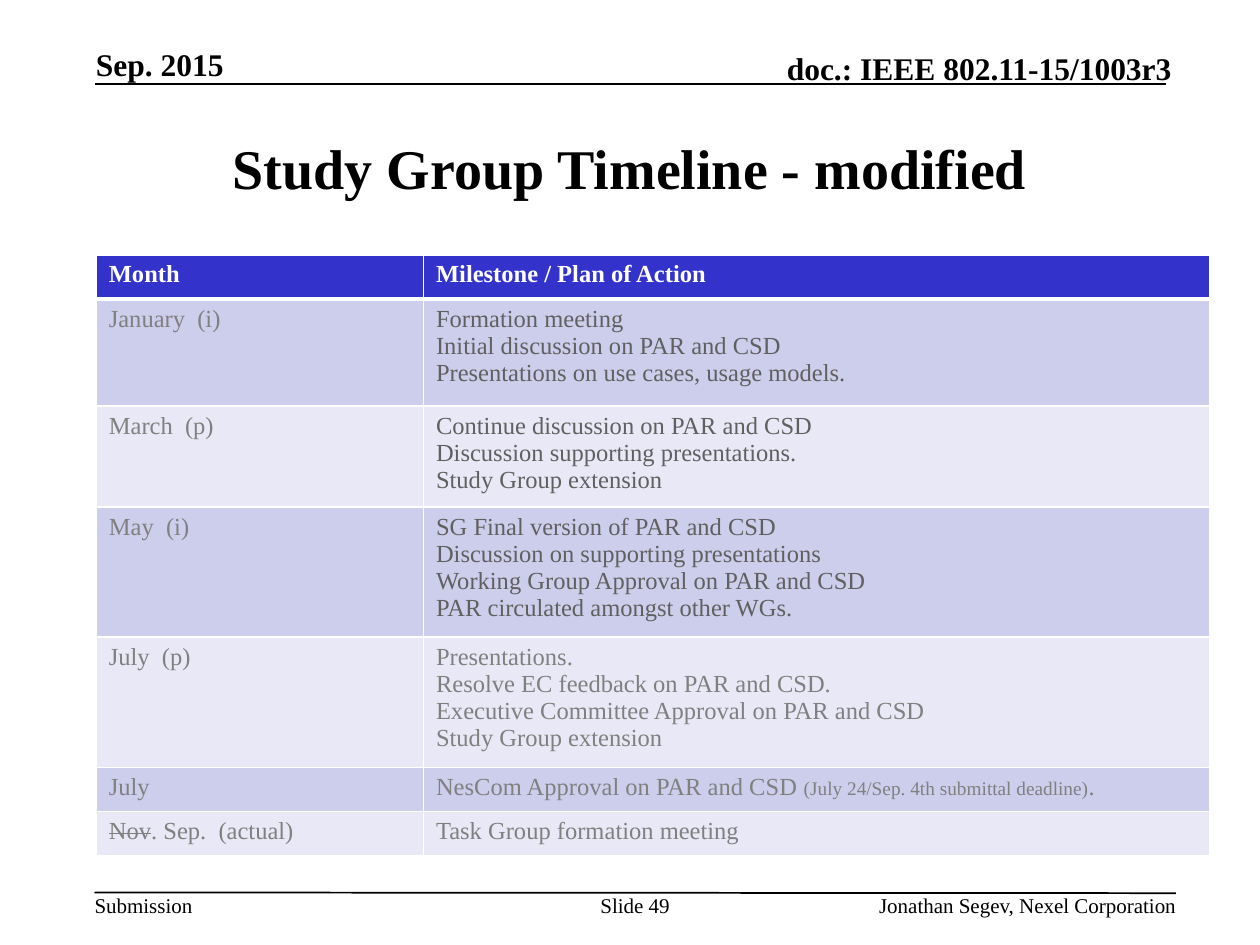
from lxml import etree
from pptx import Presentation
from pptx.dml.color import RGBColor
from pptx.enum import shapes, text
from pptx.oxml import ns
from pptx.util import Pt

COLORS = {
    "black": "000000", "white": "FFFFFF", "header": "3333CC",
    "band_dark": "CDCDEC", "band_light": "E8E8F6",
    "gray": "808080", "dark_gray": "606060",
}
LEFT, CENTER, RIGHT = text.PP_ALIGN.LEFT, text.PP_ALIGN.CENTER, text.PP_ALIGN.RIGHT
TOP, MIDDLE, BOTTOM = text.MSO_ANCHOR.TOP, text.MSO_ANCHOR.MIDDLE, text.MSO_ANCHOR.BOTTOM


def write(paragraph, words, size=14, color="black", bold=False, strike=False, align=LEFT):
    paragraph.alignment = align
    run = paragraph.add_run()
    run.text = words
    run.font.name = "Times New Roman"
    run.font.size = Pt(size)
    run.font.bold = bold
    run.font.color.rgb = RGBColor.from_string(COLORS[color])
    if strike:
        run.font._element.set("strike", "sngStrike")


def set_borders(cell, top, bottom):
    properties = cell._tc.get_or_add_tcPr()
    for position, (side, width) in enumerate(
            [("lnL", 1), ("lnR", 1), ("lnT", top), ("lnB", bottom)]):
        border = etree.Element(ns.qn(f"a:{side}"), w=str(Pt(width)))
        fill = etree.SubElement(border, ns.qn("a:solidFill"))
        etree.SubElement(fill, ns.qn("a:srgbClr"), val=COLORS["white"])
        properties.insert(position, border)


deck = Presentation()
deck.slide_width, deck.slide_height = Pt(720), Pt(540)
slide = deck.slides.add_slide(deck.slide_layouts[5])

# Header and footer rules
for x1, y1, x2, y2 in [(54, 48, 666, 48), (54, 510, 672, 510.4)]:
    rule = slide.shapes.add_connector(
        shapes.MSO_CONNECTOR.STRAIGHT, Pt(x1), Pt(y1), Pt(x2), Pt(y2))
    rule.line.color.rgb = RGBColor.from_string(COLORS["black"])
    rule.line.width = Pt(1)
    etree.SubElement(rule._element.spPr, ns.qn("a:effectLst"))

# Header and footer texts
bold_header = {"size": 18, "bold": True}
for words, x, y, w, h, anchor, style in [
    ("Sep. 2015", 54.8, 26, 147.6, 21.6, BOTTOM, bold_header),
    ("doc.: IEEE 802.11-15/1003r3", 393.8, 28, 275.8, 21.6, BOTTOM,
     {**bold_header, "align": RIGHT}),
    ("Submission", 54, 510, 56, 14.4, TOP, {"size": 12}),
    ("Slide 49", 342, 510, 41.8, 28.8, TOP, {"size": 12, "align": CENTER}),
    ("Jonathan Segev, Nexel Corporation", 421.9, 510, 250.3, 14.4, TOP,
     {"size": 12, "align": RIGHT}),
]:
    frame = slide.shapes.add_textbox(Pt(x), Pt(y), Pt(w), Pt(h)).text_frame
    frame.margin_left = frame.margin_right = frame.margin_top = frame.margin_bottom = 0
    frame.word_wrap = words != "Submission"
    frame.vertical_anchor = anchor
    write(frame.paragraphs[0], words, **style)

# Title
title = slide.shapes.title
title.left, title.top, title.width, title.height = Pt(54), Pt(54), Pt(612), Pt(83.5)
title.text_frame.vertical_anchor = MIDDLE
title.text_frame.auto_size = text.MSO_AUTO_SIZE.NONE
write(title.text_frame.paragraphs[0], "Study Group Timeline - modified",
      size=32, bold=True, align=CENTER)

# Timeline: row height, month runs, milestone color, milestone lines as runs
timeline = [
    (25.2, [("Month", {})], "white", [[("Milestone / Plan of Action", {})]]),
    (61.2, [("January  (i)", {})], "dark_gray", [
        [("Formation meeting", {})],
        [("Initial discussion on PAR and CSD", {})],
        [("Presentations on use cases, usage models.", {})]]),
    (55.4, [("March  (p)", {})], "dark_gray", [
        [("Continue discussion on PAR and CSD", {})],
        [("Discussion supporting presentations.", {})],
        [("Study Group extension", {})]]),
    (72, [("May  (i)", {})], "dark_gray", [
        [("SG Final version of PAR and CSD", {})],
        [("Discussion on supporting presentations", {})],
        [("Working Group Approval on PAR and CSD", {})],
        [("PAR circulated amongst other WGs.", {})]]),
    (72, [("July  (p)", {})], "gray", [
        [("Presentations.", {})],
        [("Resolve EC feedback on PAR and CSD.", {})],
        [("Executive Committee Approval on PAR and CSD", {})],
        [("Study Group extension", {})]]),
    (25.2, [("July", {})], "gray", [
        [("NesCom Approval on PAR and CSD ", {}),
         ("(July 24/Sep. 4th submittal deadline)", {"size": 11}), (".", {})]]),
    (25.2, [("Nov", {"strike": True}), (". Sep.  (actual)", {})], "gray", [
        [("Task Group formation meeting", {})]]),
]
table = slide.shapes.add_table(
    len(timeline), 2, Pt(55), Pt(145.6), Pt(636.2),
    Pt(sum(row[0] for row in timeline))).table
table.columns[0].width, table.columns[1].width = Pt(187), Pt(449.2)

for index, (height, month, milestone_color, milestones) in enumerate(timeline):
    table.rows[index].height = Pt(height)
    is_header = index == 0
    band = "header" if is_header else ("band_light", "band_dark")[index % 2]
    month_color = "white" if is_header else "gray"
    for column, (color, lines) in enumerate(
            [(month_color, [month]), (milestone_color, milestones)]):
        cell = table.cell(index, column)
        cell.fill.solid()
        cell.fill.fore_color.rgb = RGBColor.from_string(COLORS[band])
        set_borders(cell, top=3 if index == 1 else 1, bottom=3 if is_header else 1)
        for number, runs in enumerate(lines):
            frame = cell.text_frame
            paragraph = frame.add_paragraph() if number else frame.paragraphs[0]
            for words, style in runs:
                write(paragraph, words, color=color, bold=is_header, **style)

deck.save("out.pptx")
